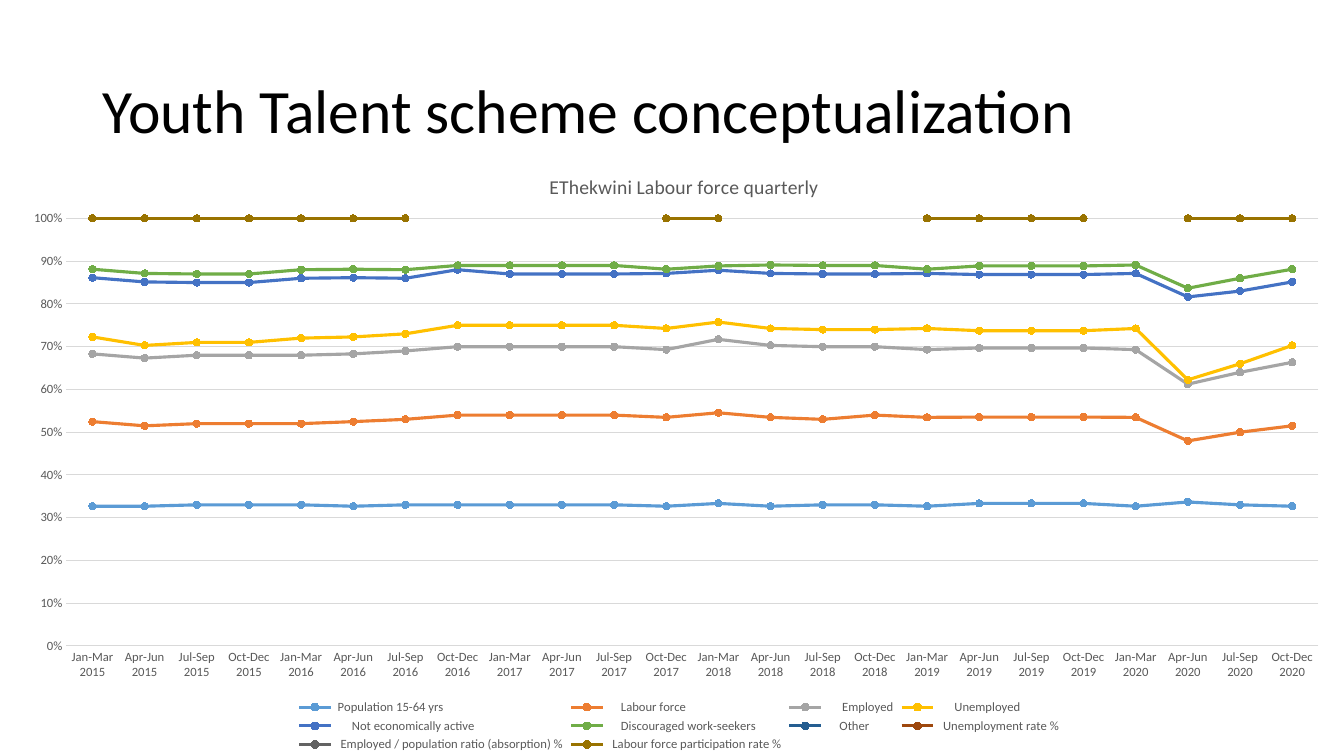
from dataclasses import dataclass

from lxml.etree import SubElement
from pptx import Presentation
from pptx.chart.data import CategoryChartData
from pptx.dml.color import RGBColor
from pptx.enum.chart import XL_CHART_TYPE, XL_LEGEND_POSITION, XL_MARKER_STYLE, XL_TICK_MARK
from pptx.enum.text import MSO_ANCHOR
from pptx.oxml.ns import qn
from pptx.util import Inches, Pt


@dataclass(frozen=True)
class Theme:
    font: str = "Calibri"
    ink: str = "000000"
    muted: str = "595959"
    grid: str = "D9D9D9"
    title_size: float = 44
    chart_title_size: float = 14
    label_size: float = 9
    line_width: float = 2.25
    grid_width: float = 0.75
    marker_size: int = 5


# Labour force data, one value per quarter
QUARTERS = [f"{months} {year}" for year in range(2015, 2021)
            for months in ("Jan-Mar", "Apr-Jun", "Jul-Sep", "Oct-Dec")]
NONE = [0] * len(QUARTERS)
LABOUR_SERIES = [
    (" Population 15-64 yrs", "5B9BD5", [33] * len(QUARTERS)),
    ("     Labour force", "ED7D31",
     [20, 19, 19, 19, 19, 20, 20, 21, 21, 21, 21, 21,
      21, 21, 20, 21, 21, 20, 20, 20, 21, 14, 17, 19]),
    ("      Employed", "A5A5A5",
     [16, 16, 16, 16, 16, 16, 16, 16, 16, 16, 16, 16,
      17, 17, 17, 16, 16, 16, 16, 16, 16, 13, 14, 15]),
    ("      Unemployed", "FFC000",
     [4, 3, 3, 3, 4, 4, 4, 5, 5, 5, 5, 5,
      4, 4, 4, 4, 5, 4, 4, 4, 5, 1, 2, 4]),
    ("      Not economically active", "4472C4",
     [14, 15, 14, 14, 14, 14, 13, 13, 12, 12, 12, 13,
      12, 13, 13, 13, 13, 13, 13, 13, 13, 19, 17, 15]),
    ("     Discouraged work-seekers", "70AD47",
     [2, 2, 2, 2, 2, 2, 2, 1, 2, 2, 2, 1,
      1, 2, 2, 2, 1, 2, 2, 2, 2, 2, 3, 3]),
    ("     Other", "255E91",
     [12, 13, 13, 13, 12, 12, 12, 11, 11, 11, 11, 12,
      11, 11, 11, 11, 12, 11, 11, 11, 11, 16, 14, 12]),
    ("  Unemployment rate %", "9E480E", NONE),
    ("  Employed / population ratio (absorption) %", "636363", NONE),
    ("  Labour force participation rate %", "997300", NONE),
]


def style_font(font, theme, size, color, bold=False):
    font.name = theme.font
    font.size = Pt(size)
    font.bold = bold
    font.color.rgb = RGBColor.from_string(color)


def write_text(text_frame, text, *, theme, size, color, bold=False, line_spacing=None):
    paragraph = text_frame.paragraphs[0]
    paragraph.line_spacing = line_spacing
    run = paragraph.add_run()
    run.text = text
    style_font(run.font, theme, size, color, bold)


def style_line(line, color, width):
    line.color.rgb = RGBColor.from_string(color)
    line.width = Pt(width)


def place_chart_part(element, index, **fractions):
    """Fix a chart part's place, in fractions of the chart's size."""
    layout = element.find(qn("c:layout"))
    if layout is None:
        layout = SubElement(element, qn("c:layout"))
        element.insert(index, layout)
    manual = SubElement(layout, qn("c:manualLayout"))
    if "w" in fractions:
        SubElement(manual, qn("c:layoutTarget")).set("val", "inner")
    for mode in ("xMode", "yMode"):
        SubElement(manual, qn(f"c:{mode}")).set("val", "edge")
    for key, value in fractions.items():
        SubElement(manual, qn(f"c:{key}")).set("val", str(value))


class SlideBuilder:
    def __init__(self, slide, theme):
        self.slide = slide
        self.theme = theme

    def add_title(self, text, left, top, width, height):
        box = self.slide.shapes.add_textbox(
            Inches(left), Inches(top), Inches(width), Inches(height))
        box.text_frame.word_wrap = True
        box.text_frame.vertical_anchor = MSO_ANCHOR.MIDDLE
        write_text(box.text_frame, text, theme=self.theme, size=self.theme.title_size,
                   color=self.theme.ink, line_spacing=0.9)

    def add_line_chart(self, title, categories, series_rows, left, top, width, height):
        theme = self.theme
        data = CategoryChartData(number_format="#,##0")
        data.categories = categories
        for name, _, values in series_rows:
            data.add_series(name, values)
        chart = self.slide.shapes.add_chart(
            XL_CHART_TYPE.LINE_MARKERS_STACKED_100, Inches(left), Inches(top),
            Inches(width), Inches(height), data).chart
        style_font(chart.font, theme, theme.label_size, theme.muted)

        # Chart title
        chart.has_title = True
        write_text(chart.chart_title.text_frame, title, theme=theme,
                   size=theme.chart_title_size, color=theme.muted)

        # Series lines and markers
        chart.plots[0].vary_by_categories = False
        for series, (_, color, _) in zip(chart.plots[0].series, series_rows):
            series.smooth = False
            style_line(series.format.line, color, theme.line_width)
            series.marker.style = XL_MARKER_STYLE.CIRCLE
            series.marker.size = theme.marker_size
            series.marker.format.fill.solid()
            series.marker.format.fill.fore_color.rgb = RGBColor.from_string(color)
            style_line(series.marker.format.line, color, theme.grid_width)

        # Axes and gridlines
        for axis in (chart.category_axis, chart.value_axis):
            axis.major_tick_mark = axis.minor_tick_mark = XL_TICK_MARK.NONE
            style_font(axis.tick_labels.font, theme, theme.label_size, theme.muted)
        style_line(chart.category_axis.format.line, theme.grid, theme.grid_width)
        chart.value_axis.format.line.fill.background()
        style_line(chart.value_axis.major_gridlines.format.line, theme.grid, theme.grid_width)
        chart.value_axis.tick_labels.number_format = "0%"
        chart.value_axis.tick_labels.number_format_is_linked = False

        # Legend
        chart.has_legend = True
        chart.legend.position = XL_LEGEND_POSITION.BOTTOM
        chart.legend.include_in_layout = False
        style_font(chart.legend.font, theme, theme.label_size, theme.muted)

        # Places of the title and the plot
        place_chart_part(chart.chart_title.element, 1, x=0.4, y=0.04)
        place_chart_part(chart.element.chart.plotArea, 0, x=0.04, y=0.12, w=0.94, h=0.7)


def main():
    presentation = Presentation()
    presentation.slide_width = Inches(13.33)
    presentation.slide_height = Inches(7.5)
    slide = presentation.slides.add_slide(presentation.slide_layouts[6])
    builder = SlideBuilder(slide, Theme())

    # Slide title, with the labour force chart under it
    builder.add_title("Youth Talent scheme conceptualization", 0.92, 0.4, 11.5, 1.45)
    builder.add_line_chart("EThekwini Labour force quarterly", QUARTERS,
                           LABOUR_SERIES, 0.13, 1.44, 13.21, 6.06)

    presentation.save("out.pptx")


if __name__ == "__main__":
    main()
